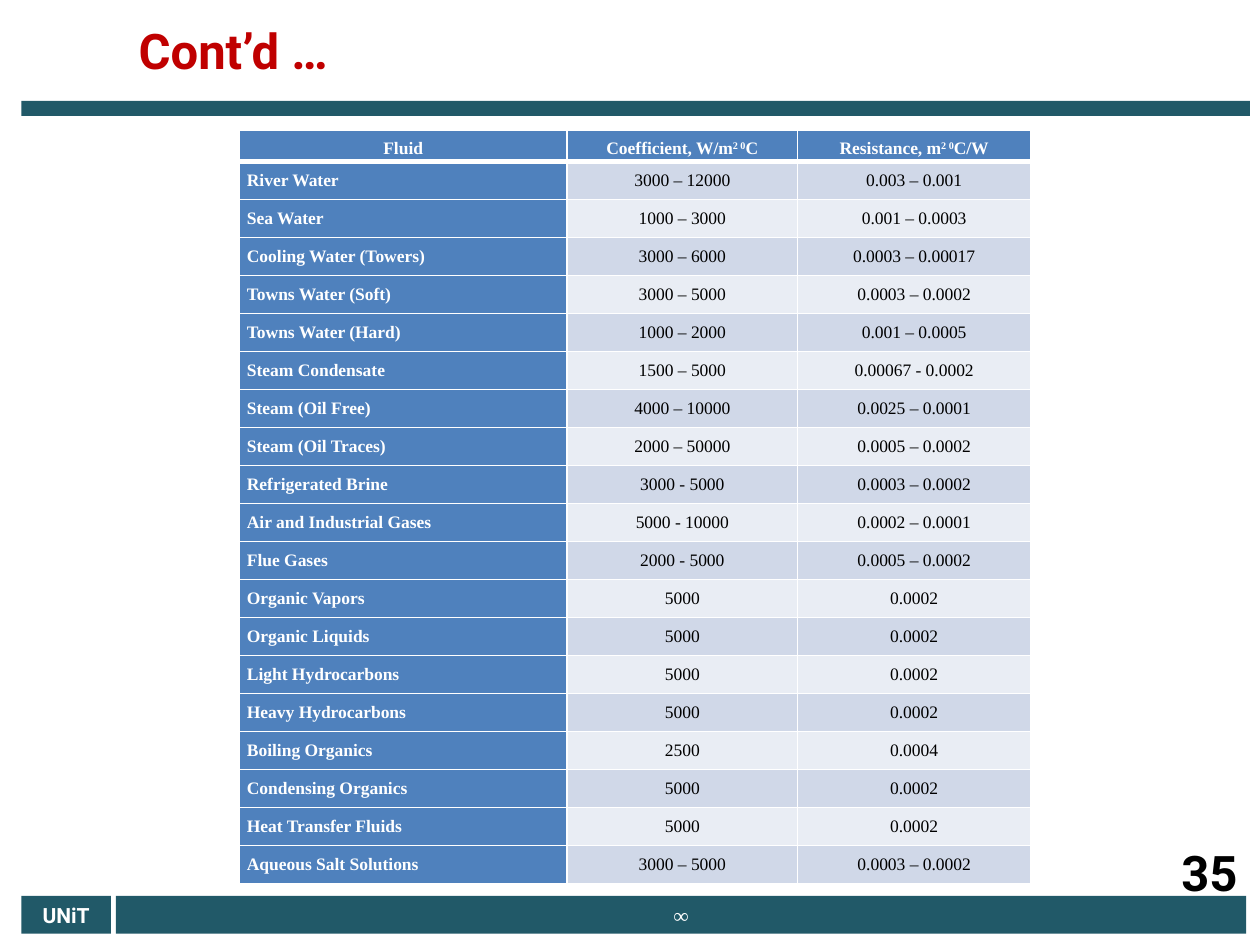
from dataclasses import dataclass

from lxml import etree
from pptx import Presentation
from pptx.dml.color import RGBColor
from pptx.enum.shapes import MSO_SHAPE
from pptx.enum.text import MSO_ANCHOR, MSO_AUTO_SIZE, PP_ALIGN
from pptx.oxml.ns import qn
from pptx.util import Inches, Pt

RECTANGLE = MSO_SHAPE.RECTANGLE
TOP, MIDDLE = MSO_ANCHOR.TOP, MSO_ANCHOR.MIDDLE
LEFT, CENTER, RIGHT = PP_ALIGN.LEFT, PP_ALIGN.CENTER, PP_ALIGN.RIGHT
JUSTIFY = PP_ALIGN.JUSTIFY
FIT_SHAPE = MSO_AUTO_SIZE.SHAPE_TO_FIT_TEXT

SANS, SERIF = "Roboto", "Times New Roman"
TEAL, RED, WHITE, BLACK = "215968", "C00000", "FFFFFF", "000000"
BLUE, BAND_DARK, BAND_LIGHT = "4F81BD", "D0D8E8", "E9EDF4"


@dataclass
class Bar:
    left: float
    top: float
    width: float
    height: float
    label: str = ""
    font: str = SANS


@dataclass
class Fluid:
    name: str
    coefficient: str
    resistance: str


BARS = [
    Bar(0.17, 0.8, 9.75, 0.12),
    Bar(0.17, 7.11, 0.71, 0.3, "UNiT"),
    Bar(0.92, 7.11, 8.97, 0.3, "∞", SERIF),
]

COLUMN_WIDTHS = [2.6, 1.83, 1.85]
HEADER_HEIGHT, TABLE_HEIGHT = 0.23, 5.96
HEADINGS = [
    ["Fluid"],
    ["Coefficient, W/m", "2 0", "C"],
    ["Resistance, m", "2 0", "C/W"],
]

FLUIDS = [
    Fluid("River Water", "3000 – 12000", "0.003 – 0.001"),
    Fluid("Sea Water", "1000 – 3000", "0.001 – 0.0003"),
    Fluid("Cooling Water (Towers)", "3000 – 6000", "0.0003 – 0.00017"),
    Fluid("Towns Water (Soft)", "3000 – 5000", "0.0003 – 0.0002"),
    Fluid("Towns Water (Hard)", "1000 – 2000", "0.001 – 0.0005"),
    Fluid("Steam Condensate", "1500 – 5000", "0.00067 - 0.0002"),
    Fluid("Steam (Oil Free)", "4000 – 10000", "0.0025 – 0.0001"),
    Fluid("Steam (Oil Traces)", "2000 – 50000", "0.0005 – 0.0002"),
    Fluid("Refrigerated Brine", "3000 - 5000", "0.0003 – 0.0002"),
    Fluid("Air and Industrial Gases", "5000 - 10000", "0.0002 – 0.0001"),
    Fluid("Flue Gases", "2000 - 5000", "0.0005 – 0.0002"),
    Fluid("Organic Vapors", "5000", "0.0002"),
    Fluid("Organic Liquids", "5000", "0.0002"),
    Fluid("Light Hydrocarbons", "5000", "0.0002"),
    Fluid("Heavy Hydrocarbons", "5000", "0.0002"),
    Fluid("Boiling Organics", "2500", "0.0004"),
    Fluid("Condensing Organics", "5000", "0.0002"),
    Fluid("Heat Transfer Fluids", "5000", "0.0002"),
    Fluid("Aqueous Salt Solutions", "3000 – 5000", "0.0003 – 0.0002"),
]


def rgb(color: str) -> RGBColor:
    return RGBColor.from_string(color)


def format_text(frame, size: float, font: str, color: str, align, bold: bool = True) -> None:
    paragraph = frame.paragraphs[0]
    paragraph.alignment = align
    for run in paragraph.runs:
        run.font.size = Pt(size)
        run.font.name = font
        run.font.bold = bold
        run.font.color.rgb = rgb(color)


def add_title(slide, text: str) -> None:
    title = slide.shapes.title
    title.left, title.top = Inches(0), Inches(0.11)
    title.width, title.height = Inches(9.88), Inches(0.57)
    frame = title.text_frame
    frame.text = text
    frame.margin_left = Inches(1.1)
    frame.vertical_anchor = TOP
    frame.auto_size = FIT_SHAPE
    format_text(frame, 28, SANS, RED, LEFT)


def add_bar(slide, bar: Bar) -> None:
    shape = slide.shapes.add_shape(
        RECTANGLE, Inches(bar.left), Inches(bar.top), Inches(bar.width), Inches(bar.height)
    )
    shape.shadow.inherit = False
    shape.fill.solid()
    shape.fill.fore_color.rgb = rgb(TEAL)
    shape.line.fill.background()
    if bar.label:
        shape.text_frame.text = bar.label
        format_text(shape.text_frame, 12, bar.font, WHITE, CENTER)


def add_page_number(slide, number: str) -> None:
    box = slide.shapes.add_textbox(Inches(9.19), Inches(6.67), Inches(0.73), Inches(0.5))
    frame = box.text_frame
    frame.word_wrap = True
    frame.vertical_anchor = MIDDLE
    frame.text = number
    format_text(frame, 28, SANS, BLACK, RIGHT)


def add_borders(cell, widths: dict[str, float]) -> None:
    properties = cell._tc.get_or_add_tcPr()
    for side, width in widths.items():
        line = etree.SubElement(properties, qn(f"a:ln{side}"), w=str(Pt(width)))
        fill = etree.SubElement(line, qn("a:solidFill"))
        etree.SubElement(fill, qn("a:srgbClr"), val=WHITE)


def fill_cell(cell, parts: list[str], fill: str, color: str, align, bold: bool,
              top: float, bottom: float) -> None:
    cell.margin_left = cell.margin_right = Inches(0.06)
    cell.margin_top = cell.margin_bottom = 0
    add_borders(cell, {"L": 1, "R": 1, "T": top, "B": bottom})
    cell.fill.solid()
    cell.fill.fore_color.rgb = rgb(fill)
    paragraph = cell.text_frame.paragraphs[0]
    paragraph.line_spacing = 1.5
    for index, part in enumerate(parts):
        run = paragraph.add_run()
        run.text = part
        if index == 1:
            run.font._element.set("baseline", "30000")
    format_text(cell.text_frame, 10, SERIF, color, align, bold)


def add_fluid_table(slide, fluids: list[Fluid]) -> None:
    table = slide.shapes.add_table(
        len(fluids) + 1, len(COLUMN_WIDTHS), Inches(1.9), Inches(1.03),
        Inches(sum(COLUMN_WIDTHS)), Inches(TABLE_HEIGHT),
    ).table
    for column, width in zip(table.columns, COLUMN_WIDTHS):
        column.width = Inches(width)
    body_height = (TABLE_HEIGHT - HEADER_HEIGHT) / len(fluids)
    for index, row in enumerate(table.rows):
        row.height = Inches(body_height if index else HEADER_HEIGHT)
    for column, parts in enumerate(HEADINGS):
        fill_cell(table.cell(0, column), parts, BLUE, WHITE, CENTER, True, 1, 3)
    for row, fluid in enumerate(fluids, start=1):
        top = 3 if row == 1 else 1
        band = BAND_DARK if row % 2 else BAND_LIGHT
        fill_cell(table.cell(row, 0), [fluid.name], BLUE, WHITE, JUSTIFY, True, top, 1)
        for column, value in enumerate((fluid.coefficient, fluid.resistance), start=1):
            fill_cell(table.cell(row, column), [value], band, BLACK, CENTER, False, top, 1)


def main() -> None:
    presentation = Presentation()
    presentation.slide_width, presentation.slide_height = Inches(10), Inches(7.5)
    slide = presentation.slides.add_slide(presentation.slide_layouts[5])
    add_title(slide, "Cont’d …")
    for bar in BARS:
        add_bar(slide, bar)
    add_page_number(slide, "35")
    add_fluid_table(slide, FLUIDS)
    presentation.save("out.pptx")


if __name__ == "__main__":
    main()
